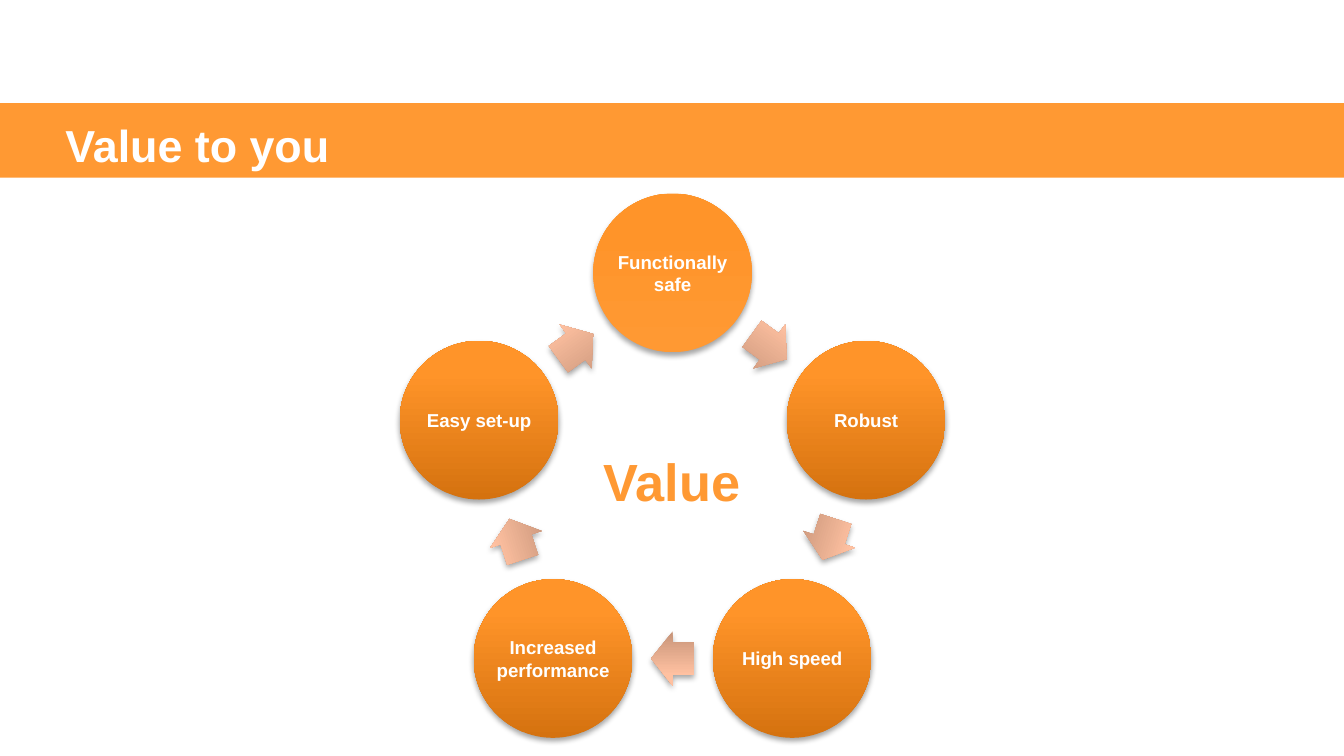
from dataclasses import dataclass
from math import cos, pi, sin

from lxml import etree
from pptx import Presentation
from pptx.dml.color import RGBColor
from pptx.enum.shapes import MSO_SHAPE
from pptx.enum.text import MSO_ANCHOR, MSO_AUTO_SIZE, PP_ALIGN
from pptx.oxml.ns import qn
from pptx.util import Pt

RECT, OVAL, ARROW = MSO_SHAPE.RECTANGLE, MSO_SHAPE.OVAL, MSO_SHAPE.RIGHT_ARROW
LEFT, CENTER = PP_ALIGN.LEFT, PP_ALIGN.CENTER
TOP, MIDDLE = MSO_ANCHOR.TOP, MSO_ANCHOR.MIDDLE
FIT, FIXED = MSO_AUTO_SIZE.SHAPE_TO_FIT_TEXT, MSO_AUTO_SIZE.NONE


@dataclass(frozen=True)
class Theme:
    font: str = "Arial"
    orange: str = "FF9933"
    white: str = "FFFFFF"
    shadow: str = "000000"
    circle: tuple = ((0, "D5720F"), (80, "FF9429"), (100, "FF952B"))
    first_circle: tuple = ((0, "FF9933"), (80, "FF9429"), (100, "FF952B"))
    arrow: tuple = ((0, "C79479"), (80, "FFC1A1"), (100, "FFC3A3"))
    title_size: int = 24
    hub_size: int = 28
    label_size: int = 10


class Deck:
    """The theme and the current slide, with one method per kind of element."""

    def __init__(self, slide, theme):
        self.s = slide
        self.theme = theme

    def shape(self, kind, x, y, w, h):
        sp = self.s.shapes.add_shape(kind, Pt(x), Pt(y), Pt(w), Pt(h))
        sp.shadow.inherit = False
        sp.line.fill.background()
        return sp

    def bar(self, x, y, w, h):
        sp = self.shape(RECT, x, y, w, h)
        sp.fill.solid()
        sp.fill.fore_color.rgb = RGBColor.from_string(self.theme.orange)

    def glossy(self, kind, cx, cy, w, h, stops):
        """Centred shape with an upward gradient and a soft shadow below."""
        sp = self.shape(kind, cx - w / 2, cy - h / 2, w, h)
        sp.fill.gradient()
        sp.fill.gradient_angle = 90
        pr = sp._element.spPr
        stop_list = pr.find(".//" + qn("a:gsLst"))
        for old in list(stop_list):
            stop_list.remove(old)
        for pos, color in stops:
            gs = etree.SubElement(stop_list, qn("a:gs"), pos=str(pos * 1000))
            etree.SubElement(gs, qn("a:srgbClr"), val=color)
        shadow = etree.SubElement(
            pr.find(qn("a:effectLst")), qn("a:outerShdw"), blurRad=str(Pt(3.1)),
            dist=str(Pt(1.8)), dir="5400000", rotWithShape="0")
        color = etree.SubElement(shadow, qn("a:srgbClr"), val=self.theme.shadow)
        etree.SubElement(color, qn("a:alpha"), val="35000")
        return sp

    def arrow(self, cx, cy, rotation):
        sp = self.glossy(ARROW, cx, cy, 23, 29, self.theme.arrow)
        sp.adjustments[0], sp.adjustments[1] = 0.6, 0.5
        sp.rotation = rotation

    def text(self, x, y, w, h, words, size, color,
             align=CENTER, anchor=MIDDLE, auto_size=FIT):
        tf = self.s.shapes.add_textbox(Pt(x), Pt(y), Pt(w), Pt(h)).text_frame
        tf.word_wrap = True
        tf.auto_size = auto_size
        tf.vertical_anchor = anchor
        p = tf.paragraphs[0]
        p.alignment = align
        r = p.add_run()
        r.text = words
        r.font.name = self.theme.font
        r.font.size = Pt(size)
        r.font.bold = True
        r.font.color.rgb = RGBColor.from_string(color)


def ring(count, cx, cy, rx, ry):
    """Points spread clockwise from the top of an ellipse."""
    angles = [2 * pi * i / count for i in range(count)]
    return [(cx + rx * sin(a), cy - ry * cos(a)) for a in angles]


def main():
    prs = Presentation()
    prs.slide_width, prs.slide_height = Pt(720), Pt(405)
    theme = Theme()
    deck = Deck(prs.slides.add_slide(prs.slide_layouts[6]), theme)

    deck.bar(0, 55.2, 720, 40)
    deck.text(28, 59.5, 662, 27, "Value to you", theme.title_size, theme.white,
              align=LEFT, anchor=TOP, auto_size=FIXED)

    # Each value: label and its number of lines
    values = [("Functionally safe", 2), ("Robust", 1), ("High speed", 1),
              ("Increased performance", 2), ("Easy set-up", 1)]
    count = len(values)
    centers = ring(count, 360.3, 260.4, 109, 114.2)
    diameter, label_width = 85, 79

    for i, (x, y) in enumerate(centers):
        stops = theme.circle if i else theme.first_circle
        deck.glossy(OVAL, x, y, diameter, diameter, stops)

    for i, (x, y) in enumerate(centers):
        next_x, next_y = centers[(i + 1) % count]
        deck.arrow((x + next_x) / 2, (y + next_y) / 2, (36 + i * 360 / count) % 360)

    for (label, lines), (x, y) in zip(values, centers):
        height = 7.5 + 12 * lines
        deck.text(x - label_width / 2, y - height / 2, label_width, height,
                  label, theme.label_size, theme.white)

    deck.text(310, 237, 100, 41, "Value", theme.hub_size, theme.orange)
    prs.save("out.pptx")


if __name__ == "__main__":
    main()
